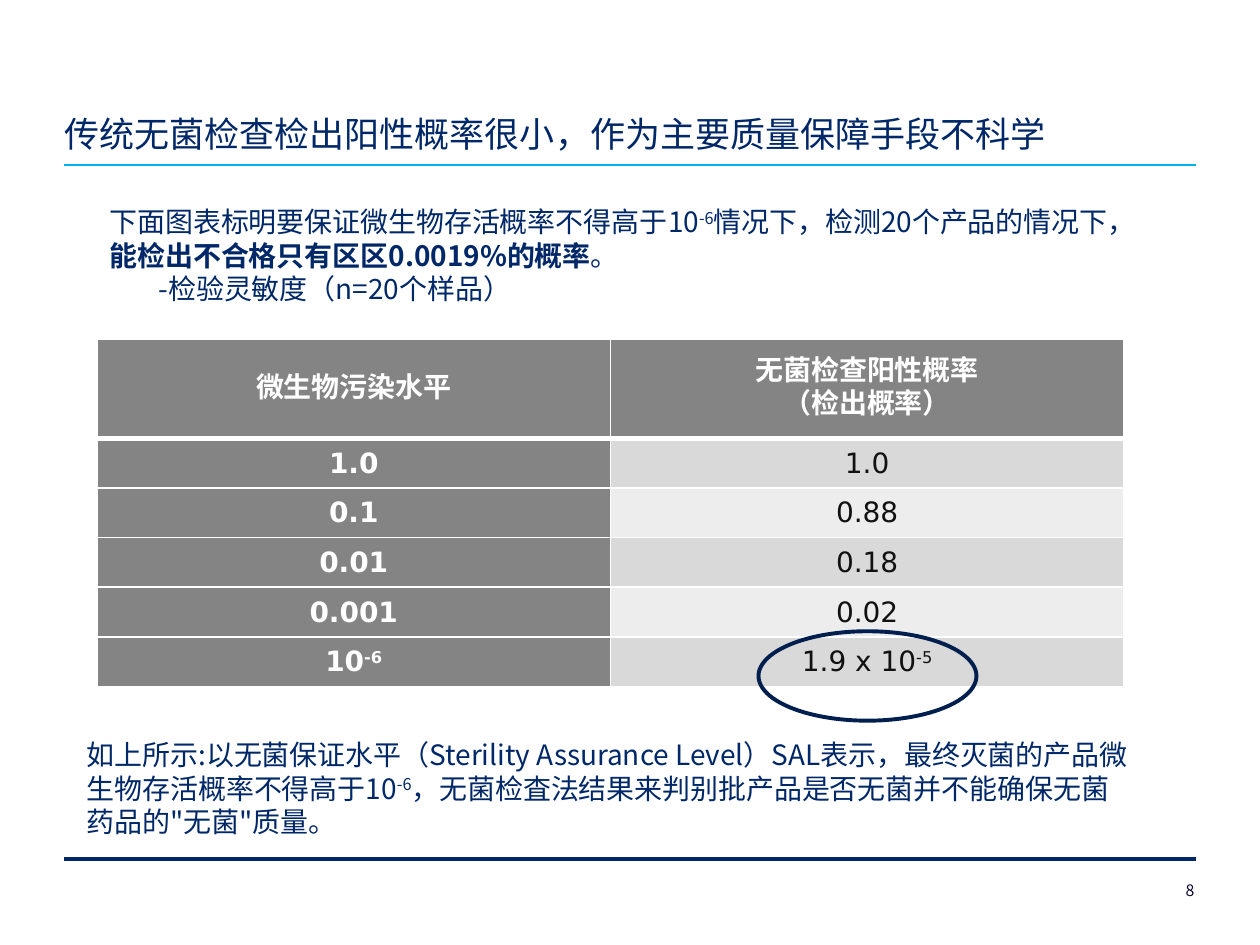
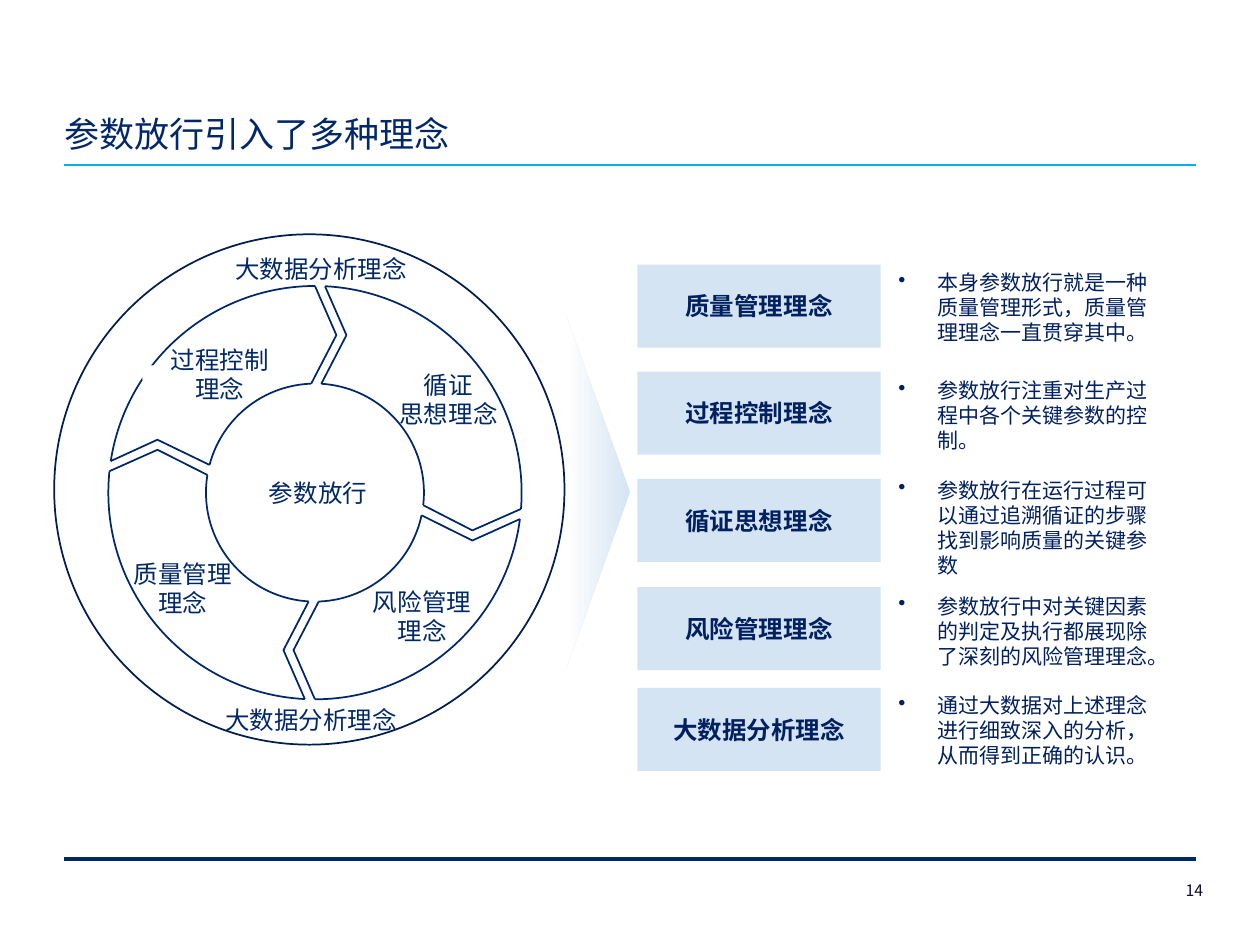
import math
from dataclasses import dataclass

from lxml import etree
from pptx import Presentation
from pptx import util as u
from pptx.dml.color import RGBColor
from pptx.enum import shapes, text
from pptx.oxml.ns import qn

CELL = u.Inches(0.1)  # the slide is a grid of 100 columns by 75 rows
COLS, ROWS = 100, 75

NAVY = RGBColor(0x00, 0x28, 0x68)
DEEP_NAVY = RGBColor(0x00, 0x1E, 0x4E)
CARD_INK = RGBColor(0x00, 0x20, 0x60)
PAGE_INK = RGBColor(0x0E, 0x07, 0x33)
SKY = RGBColor(0x00, 0xB0, 0xF0)
PALE_BLUE = RGBColor(0xD5, 0xE4, 0xF3)
WHITE = RGBColor(0xFF, 0xFF, 0xFF)
BLACK = RGBColor(0x11, 0x11, 0x11)
GREY = RGBColor(0x84, 0x84, 0x84)
BANDS = RGBColor(0xD9, 0xD9, 0xD9), RGBColor(0xED, 0xED, 0xED)

CJK_FONT = "Noto Sans CJK SC"
LATIN_FONT = "DejaVu Sans"
LEFT, CENTER = text.PP_ALIGN.LEFT, text.PP_ALIGN.CENTER
TOP, MIDDLE, BOTTOM = (text.MSO_ANCHOR.TOP, text.MSO_ANCHOR.MIDDLE,
                       text.MSO_ANCHOR.BOTTOM)
RING_RADIUS, HUB_RADIUS = 16.4, 8.65


def cells(n):
    return u.Emu(round(n * CELL))


@dataclass
class Box:
    """A rectangle in grid columns and rows."""
    x: float
    y: float
    w: float
    h: float

    def sub(self, dx, dy, w, h):
        return Box(self.x + dx, self.y + dy, w, h)

    def emu(self):
        return [cells(n) for n in (self.x, self.y, self.w, self.h)]


def style_run(r, size, color, bold=False, font=CJK_FONT):
    r.font.size, r.font.bold, r.font.name = u.Pt(size), bold, font
    r.font.color.rgb = color
    ea = etree.SubElement(r.font._element, qn("a:ea"))
    ea.set("typeface", CJK_FONT)
    r.font._element.find(qn("a:latin")).addnext(ea)


def write(tf, paragraphs, size, color, align=LEFT, bold=False, font=CJK_FONT,
          spacing=1.19):
    """Fill tf; a paragraph is a string or a list of (text, 'sup'|'bold'|'')."""
    for i, content in enumerate(paragraphs):
        p = tf.paragraphs[0] if i == 0 else tf.add_paragraph()
        p.alignment = align
        p.line_spacing = u.Pt(round(size * spacing, 1))
        if isinstance(content, str):
            content = [(content, "")]
        for words, mark in content:
            r = p.add_run()
            r.text = words
            style_run(r, size, color, bold or mark == "bold", font)
            if mark == "sup":
                r.font._element.set("baseline", "30000")


def frame(tf, anchor=TOP, inset_x=1.0, inset_y=0.5):
    tf.word_wrap = True
    tf.vertical_anchor = anchor
    tf.margin_left = tf.margin_right = cells(inset_x)
    tf.margin_top = tf.margin_bottom = cells(inset_y)


def add_text(s, box, paragraphs, size, color, anchor=TOP, inset=(1, 0.5), **kw):
    tf = s.shapes.add_textbox(*box.emu()).text_frame
    frame(tf, anchor, *inset)
    write(tf, paragraphs, size, color, **kw)
    return tf


def paint(sp, fill=None, line=None, width=1):
    sp.shadow.inherit = False
    if fill is None:
        sp.fill.background()
    else:
        sp.fill.solid()
        sp.fill.fore_color.rgb = fill
    if line is None:
        sp.line.fill.background()
    else:
        sp.line.color.rgb = line
        sp.line.width = u.Pt(width)


def add_shape(s, kind, box, **look):
    sp = s.shapes.add_shape(kind, *box.emu())
    paint(sp, **look)
    return sp


def add_circle(s, cx, cy, radius, **look):
    return add_shape(s, shapes.MSO_SHAPE.OVAL,
                     Box(cx - radius, cy - radius, 2 * radius, 2 * radius), **look)


def add_rules_to_layout(s):
    """Put the title rule and the footer rule on the layout of s."""
    for y, color, width in ((13.1, SKY, 1.5), (68.2, NAVY, 2.25)):
        c = s.shapes.add_connector(shapes.MSO_CONNECTOR.STRAIGHT, cells(5.1),
                                   cells(y), cells(94.9), cells(y))
        c.line.color.rgb, c.line.width = color, u.Pt(width)
        etree.SubElement(c._element.spPr, qn("a:effectLst"))
        s.slide_layout.shapes.element.append(c._element)


def add_titled_slide(prs, title, number):
    s = prs.slides.add_slide(prs.slide_layouts[5])
    ph = s.shapes.title
    ph.left, ph.top, ph.width, ph.height = Box(5.1, 4.4, 91.3, 7.9).emu()
    tf = ph.text_frame
    frame(tf, BOTTOM, 0, 0)
    tf.text = title
    tf.paragraphs[0].alignment = LEFT
    tf.paragraphs[0].line_spacing = u.Pt(23.5)
    style_run(tf.paragraphs[0].runs[0], 20, NAVY)
    add_text(s, Box(94.1, 69.9, 2.5, 1.5), [number], 9, PAGE_INK, inset=(0, 0))
    return s


def set_borders(cell, top=1, bottom=1):
    tcPr = cell._tc.get_or_add_tcPr()
    for side, width in (("L", 1), ("R", 1), ("T", top), ("B", bottom)):
        ln = etree.SubElement(tcPr, qn("a:ln" + side), w=str(u.Pt(width)))
        fill = etree.SubElement(ln, qn("a:solidFill"))
        etree.SubElement(fill, qn("a:srgbClr"), val=str(WHITE))


def add_detection_table(s, box):
    rows = [
        (["微生物污染水平"], ["无菌检查阳性概率", "（检出概率）"]),
        (["1.0"], ["1.0"]),
        (["0.1"], ["0.88"]),
        (["0.01"], ["0.18"]),
        (["0.001"], ["0.02"]),
        ([[("10", ""), ("-6", "sup")]], [[("1.9 x 10", ""), ("-5", "sup")]]),
    ]
    table = s.shapes.add_table(len(rows), 2, *box.emu()).table
    table.horz_banding = False
    row_height = box.h / (len(rows) + 1)
    for i, row in enumerate(rows):
        table.rows[i].height = cells(row_height * (2 if i == 0 else 1))
        for j, paragraphs in enumerate(row):
            cell = table.cell(i, j)
            heading = i == 0 or j == 0
            set_borders(cell, 3 if i == 1 else 1, 3 if i == 0 else 1)
            cell.fill.solid()
            cell.fill.fore_color.rgb = GREY if heading else BANDS[(i - 1) % 2]
            cell.vertical_anchor = MIDDLE
            cell.margin_left = cell.margin_right = cells(0.7)
            cell.margin_top = cell.margin_bottom = 0
            write(cell.text_frame, paragraphs, 16, WHITE if heading else BLACK,
                  CENTER, heading, LATIN_FONT)
    add_shape(s, shapes.MSO_SHAPE.OVAL, box.sub(52.5, 23.2, 17.3, 7.1),
              line=DEEP_NAVY, width=2.25)


def add_sterility_texts(s, intro, conclusion):
    tf = add_text(s, intro, [
        [("下面图表标明要保证微生物存活概率不得高于10", ""), ("-6", "sup"),
         ("情况下，检测20个产品的情况下，", ""),
         ("能检出不合格只有区区0.0019%的概率", "bold"), ("。", "")],
        "-检验灵敏度（n=20个样品）"], 16, NAVY)
    tf.paragraphs[1]._p.get_or_add_pPr().set("marL", str(cells(3.9)))
    add_text(s, conclusion, [
        [("如上所示:以无菌保证水平（Sterility Assurance Level）SAL表示，"
          "最终灭菌的产品微生物存活概率不得高于10", ""), ("-6", "sup"),
         ("，无菌检査法结果来判别批产品是否无菌并不能确保无菌药品的\"无菌\"质量。",
          "")]], 16, NAVY, MIDDLE)


def add_ring_gap(s, cx, cy, turn, shift):
    """Cut the ring with a chevron: two bent lines that end on the circles,
    and a white cap over each arc between them."""
    a = math.radians(turn)
    gap = 0.8

    def place(x, y):
        return (cx + x * math.cos(a) - y * math.sin(a),
                cy + x * math.sin(a) + y * math.cos(a))

    def on_circle(x, radius):
        return x, -math.sqrt(radius ** 2 - x ** 2)

    outer, bend, inner = shift, shift + 1.7, shift - 0.3
    for start, radius in ((outer, RING_RADIUS), (inner, HUB_RADIUS)):
        middle = start + gap / 2
        x, y = place(*on_circle(middle, radius))
        cap = add_shape(s, shapes.MSO_SHAPE.RECTANGLE,
                        Box(x - gap / 2, y - 0.25, gap, 0.5), fill=WHITE)
        cap.rotation = turn + math.degrees(math.asin(middle / radius))
    for offset in (0, gap):
        points = [place(*point) for point in (
            on_circle(outer + offset, RING_RADIUS), (bend + offset, -12.5),
            on_circle(inner + offset, HUB_RADIUS))]
        start, *rest = [(cells(x), cells(y)) for x, y in points]
        fb = s.shapes.build_freeform(*start)
        fb.add_line_segments(rest, close=False)
        paint(fb.convert_to_shape(), line=NAVY)


def add_concept_wheel(s, box):
    cx, cy = box.x + 20.7, box.y + 20.5
    for radius in (RING_RADIUS, HUB_RADIUS):
        add_circle(s, cx, cy, radius, line=NAVY)
    for quarter, shift in enumerate((0, 1.3, 0, 1.7)):
        add_ring_gap(s, cx, cy, 90 * quarter, shift)
    add_shape(s, shapes.MSO_SHAPE.RECTANGLE, box.sub(7, 10.4, 13.3, 1.2),
              fill=WHITE)
    add_shape(s, shapes.MSO_SHAPE.OVAL, box, line=DEEP_NAVY)
    labels = [
        (25.9, 9.8, 10.8, 6.6, ["循证", "思想理念"]),
        (23.8, 27, 10.8, 6.6, ["风险管理理念"]),
        (4.8, 24.8, 10.8, 6.6, ["质量管理", "理念"]),
        (7, 7.8, 12.3, 6.6, ["过程控制", "理念"]),
        (14.8, 17.2, 12.3, 6.6, ["参数放行"]),
        (11.5, 36.8, 17.8, 3.4, ["大数据分析理念"]),
        (12.3, 1, 17.8, 3.4, ["大数据分析理念"]),
    ]
    for *place, paragraphs in labels:
        add_text(s, box.sub(*place), paragraphs, 14, NAVY, MIDDLE,
                 inset=(1.2, 0.5), align=CENTER)


def add_arrow_fade(s, box):
    """Box is the place before the quarter turn that points the tip right."""
    sp = add_shape(s, shapes.MSO_SHAPE.ISOSCELES_TRIANGLE, box)
    sp.rotation = 90
    sp.fill.gradient()
    sp.fill.gradient_angle = 270
    for stop, color in zip(sp.fill.gradient_stops, (PALE_BLUE, WHITE)):
        stop.color.rgb = color


def add_bullet(p, indent):
    pPr = p._p.get_or_add_pPr()
    pPr.set("marL", str(cells(indent)))
    pPr.set("indent", str(-cells(indent)))
    etree.SubElement(pPr, qn("a:buChar"), char="•")


def add_concept_list(s, box):
    concepts = [  # card row, note row, name, note
        (0, 0, "质量管理理念", "本身参数放行就是一种质量管理形式，质量管理理念一直贯穿其中。"),
        (8.5, 8.6, "过程控制理念", "参数放行注重对生产过程中各个关键参数的控制。"),
        (17, 16.5, "循证思想理念", "参数放行在运行过程可以通过追溯循证的步骤找到影响质量的关键参数"),
        (25.6, 25.7, "风险管理理念", "参数放行中对关键因素的判定及执行都展现除了深刻的风险管理理念。"),
        (33.6, 33.6, "大数据分析理念", "通过大数据对上述理念进行细致深入的分析，从而得到正确的认识。"),
    ]
    for card_row, note_row, name, note in concepts:
        card = add_shape(s, shapes.MSO_SHAPE.RECTANGLE,
                         box.sub(0, card_row, 19.3, 6.6), fill=PALE_BLUE)
        frame(card.text_frame, MIDDLE, 0.4, 0.4)
        write(card.text_frame, [name], 14, CARD_INK, CENTER, True)
        tf = add_text(s, box.sub(20.3, note_row, 20.9, 6.5), [note], 12,
                      CARD_INK, inset=(0.4, 0.4), font=LATIN_FONT)
        add_bullet(tf.paragraphs[0], 3.1)


def main():
    prs = Presentation()
    prs.slide_width, prs.slide_height = cells(COLS), cells(ROWS)

    s = add_titled_slide(prs, "传统无菌检查检出阳性概率很小，作为主要质量保障手段不科学", "8")
    add_rules_to_layout(s)
    add_sterility_texts(s, Box(7.7, 15.8, 81.5, 9.1), Box(5.9, 58, 85, 9.1))
    add_detection_table(s, Box(7.7, 26.9, 81.5, 27.6))

    s = add_titled_slide(prs, "参数放行引入了多种理念", "14")
    add_arrow_fade(s, Box(33.4, 36.5, 28.1, 5.1))
    add_concept_wheel(s, Box(4.3, 18.6, 40.5, 40.5))
    add_concept_list(s, Box(50.6, 21, 41.2, 40.2))

    prs.save("out.pptx")


if __name__ == "__main__":
    main()
